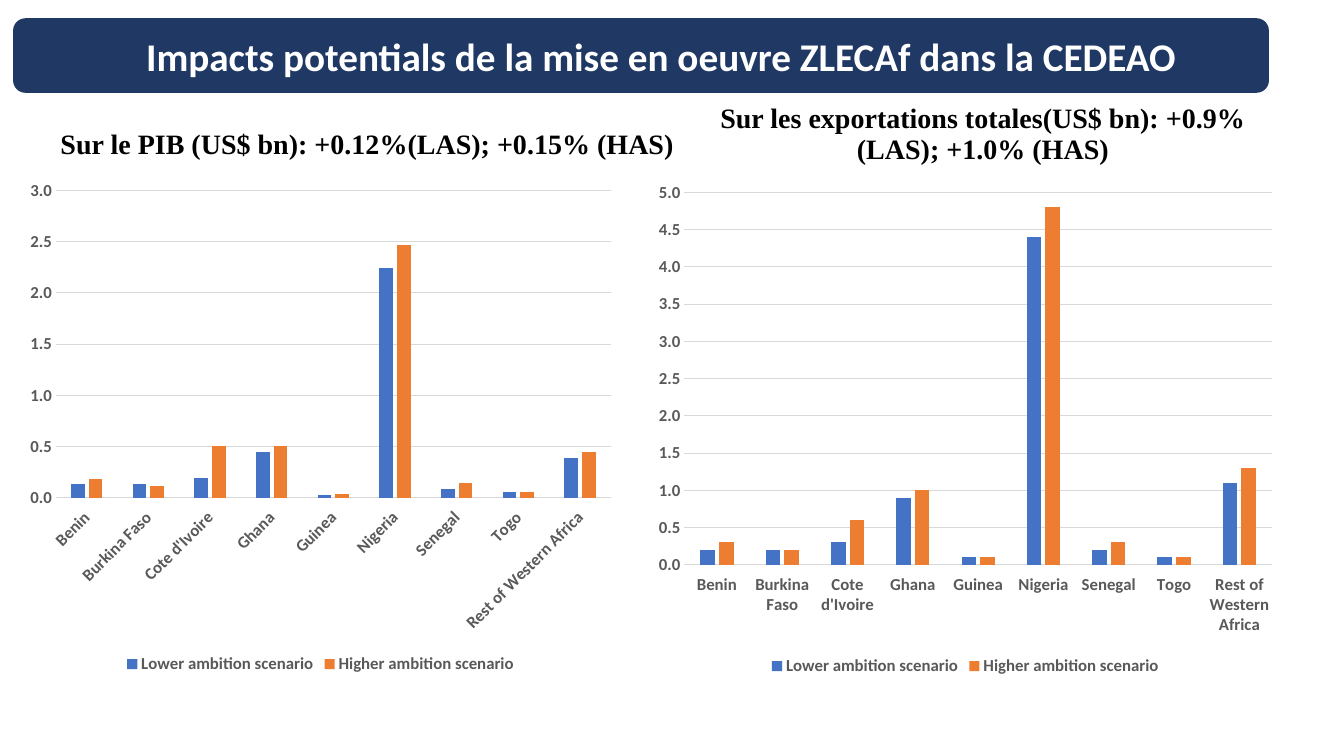
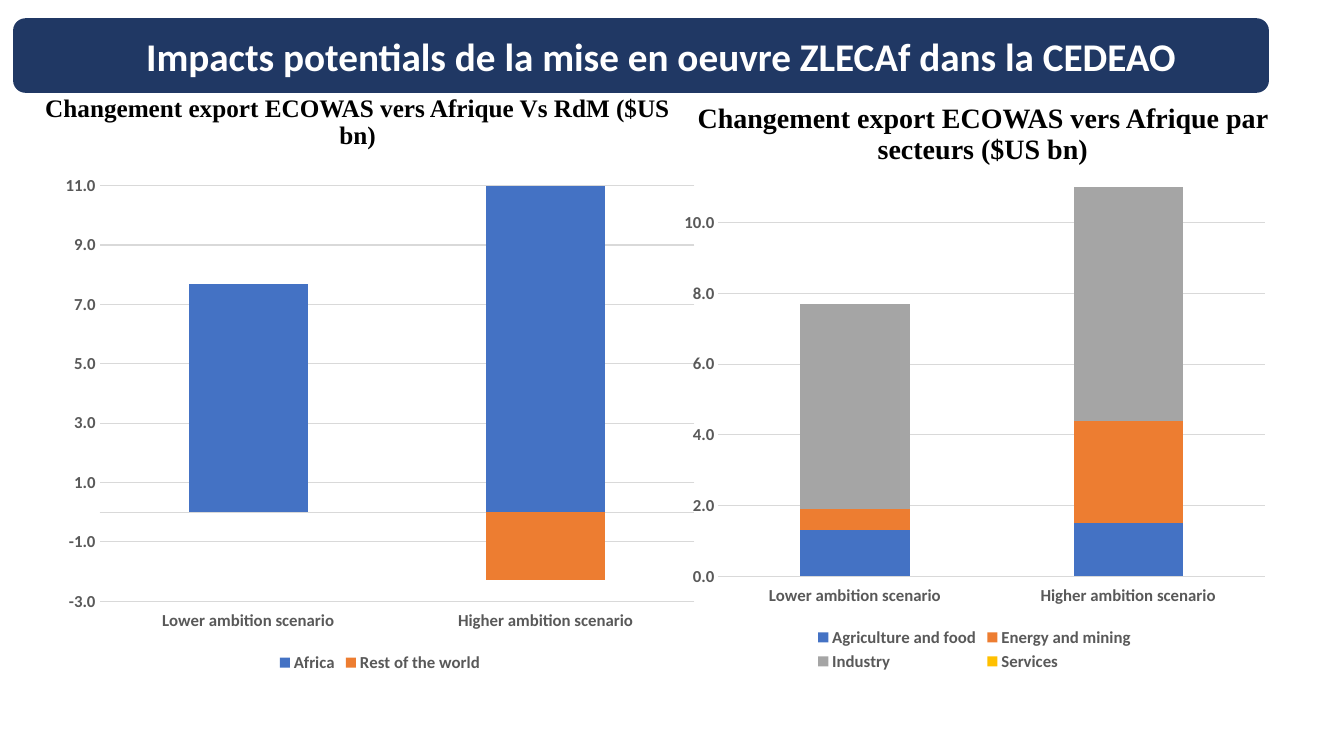
from pptx import Presentation
from pptx.util import Cm, Pt
from pptx.dml.color import RGBColor as Rgb
from pptx.chart.data import CategoryChartData as Data
from pptx.enum.chart import XL_CHART_TYPE as Kind, XL_LEGEND_POSITION as Place
from pptx.enum.chart import XL_TICK_MARK as Mark, XL_TICK_LABEL_POSITION as Spot
from pptx.enum.shapes import MSO_SHAPE as Form
from pptx.enum.text import PP_ALIGN as Align, MSO_ANCHOR as Anchor

# Shared look
HUES = {"navy": "203864", "white": "FFFFFF", "black": "000000",
        "text": "595959", "grid": "D9D9D9"}
BARS = ["4472C4", "ED7D31", "A5A5A5", "FFC000"]
HEAD = "Impacts potentials de la mise en oeuvre ZLECAf dans la CEDEAO"
LOW, HIGH = "Lower ambition scenario", "Higher ambition scenario"
LANDS = ["Benin", "Burkina Faso", "Cote d'Ivoire", "Ghana", "Guinea",
         "Nigeria", "Senegal", "Togo", "Rest of Western Africa"]
GROUP = (Kind.COLUMN_CLUSTERED, 219, -27)
STACK = (Kind.COLUMN_STACKED, 150, 100)

# Each slide: panels of title, title box, size, chart box, style, axis, data
SLIDES = [
    [
        dict(title="Sur le PIB (US$ bn): +0.12%(LAS); +0.15% (HAS)",
             top=(1.24, 3.05, 16.03, 1.22), size=20,
             box=(0.46, 4.29, 15.24, 12.8), style=GROUP,
             axis=(0, 3, 0.5), turn=-45, cats=LANDS,
             rows={LOW: [0.13, 0.13, 0.19, 0.45, 0.03, 2.24, 0.09, 0.06, 0.39],
                   HIGH: [0.18, 0.11, 0.51, 0.51, 0.04, 2.47, 0.14, 0.06, 0.45]}),
        dict(title="Sur les exportations totales(US$ bn): +0.9%(LAS); +1.0% (HAS)",
             top=(17.15, 2.46, 15.24, 1.88), size=20,
             box=(16.28, 4.34, 16.1, 12.8), style=GROUP,
             axis=(0, 5, 0.5), turn=0, cats=LANDS,
             rows={LOW: [0.2, 0.2, 0.3, 0.9, 0.1, 4.4, 0.2, 0.1, 1.1],
                   HIGH: [0.3, 0.2, 0.6, 1, 0.1, 4.8, 0.3, 0.1, 1.3]}),
    ],
    [
        dict(title="Changement export ECOWAS vers Afrique Vs RdM ($US bn)",
             top=(0.74, 2.49, 16.54, 1.22), size=18,
             box=(1.32, 4.17, 16.51, 12.88), style=STACK,
             axis=(-3, 11, 2), turn=0, cats=[LOW, HIGH],
             rows={"Africa": [7.7, 11], "Rest of the world": [0, -2.3]}),
        dict(title="Changement export ECOWAS vers Afrique par secteurs ($US bn)",
             top=(17.15, 2.46, 15.24, 1.88), size=20,
             box=(16.94, 4.47, 15.24, 12.55), style=STACK,
             axis=(0, 11, 2), turn=0, cats=[LOW, HIGH],
             rows={"Agriculture and food": [1.3, 1.5],
                   "Energy and mining": [0.6, 2.9],
                   "Industry": [5.8, 6.6], "Services": [0, 0]}),
    ],
]


def style_font(font, name, size, hue):
    font.name, font.size, font.bold = name, Pt(size), True
    font.color.rgb = Rgb.from_string(HUES[hue])


def put_text(shape, text, name, size, hue):
    frame = shape.text_frame
    frame.word_wrap = True
    frame.vertical_anchor = Anchor.MIDDLE
    frame.text = text
    para = frame.paragraphs[0]
    para.alignment = Align.CENTER
    style_font(para.runs[0].font, name, size, hue)
    return para


deck = Presentation()
deck.slide_width, deck.slide_height = Cm(33.87), Cm(19.05)

for panels in SLIDES:
    slide = deck.slides.add_slide(deck.slide_layouts[6])
    shapes = slide.shapes

    # Title band
    band = shapes.add_shape(Form.ROUNDED_RECTANGLE,
                            Cm(0.33), Cm(0.46), Cm(31.65), Cm(1.88))
    band.shadow.inherit = False
    band.fill.solid()
    band.fill.fore_color.rgb = Rgb.from_string(HUES["navy"])
    band.line.fill.background()
    para = put_text(band, HEAD, "Calibri", 28, "white")
    para._p.get_or_add_pPr().set("marL", str(Cm(1)))

    for panel in panels:
        # Panel title
        label = shapes.add_textbox(*map(Cm, panel["top"]))
        para = put_text(label, panel["title"], "Times New Roman",
                        panel["size"], "black")
        para.line_spacing = 0.9

        # Chart
        data = Data(number_format="0.0")
        data.categories = panel["cats"]
        for name, vals in panel["rows"].items():
            data.add_series(name, vals)
        kind, gap, lap = panel["style"]
        chart = shapes.add_chart(kind, *map(Cm, panel["box"]), data).chart
        chart.has_title = False
        style_font(chart.font, "Calibri", 12, "text")
        chart.has_legend = True
        chart.legend.position = Place.BOTTOM
        chart.legend.include_in_layout = False
        style_font(chart.legend.font, "Calibri", 12, "text")

        # Columns
        plot = chart.plots[0]
        plot.gap_width, plot.overlap = gap, lap
        plot.vary_by_categories = False
        for row, hue in zip(plot.series, BARS):
            row.invert_if_negative = False
            row.format.fill.solid()
            row.format.fill.fore_color.rgb = Rgb.from_string(hue)

        # Axes
        cat, val = chart.category_axis, chart.value_axis
        for axis in (cat, val):
            axis.major_tick_mark = axis.minor_tick_mark = Mark.NONE
            style_font(axis.tick_labels.font, "Calibri", 12, "text")
        val.minimum_scale, val.maximum_scale, val.major_unit = panel["axis"]
        val.tick_labels.number_format = "0.0"
        val.tick_labels.number_format_is_linked = False
        val.format.line.fill.background()
        val.has_major_gridlines = True
        for line in (cat.format.line, val.major_gridlines.format.line):
            line.color.rgb = Rgb.from_string(HUES["grid"])
            line.width = Pt(0.75)
        cat.tick_label_position = Spot.LOW
        if panel["turn"]:
            body = cat._element.txPr.bodyPr
            body.set("rot", str(panel["turn"] * 60000))

deck.save("out.pptx")
